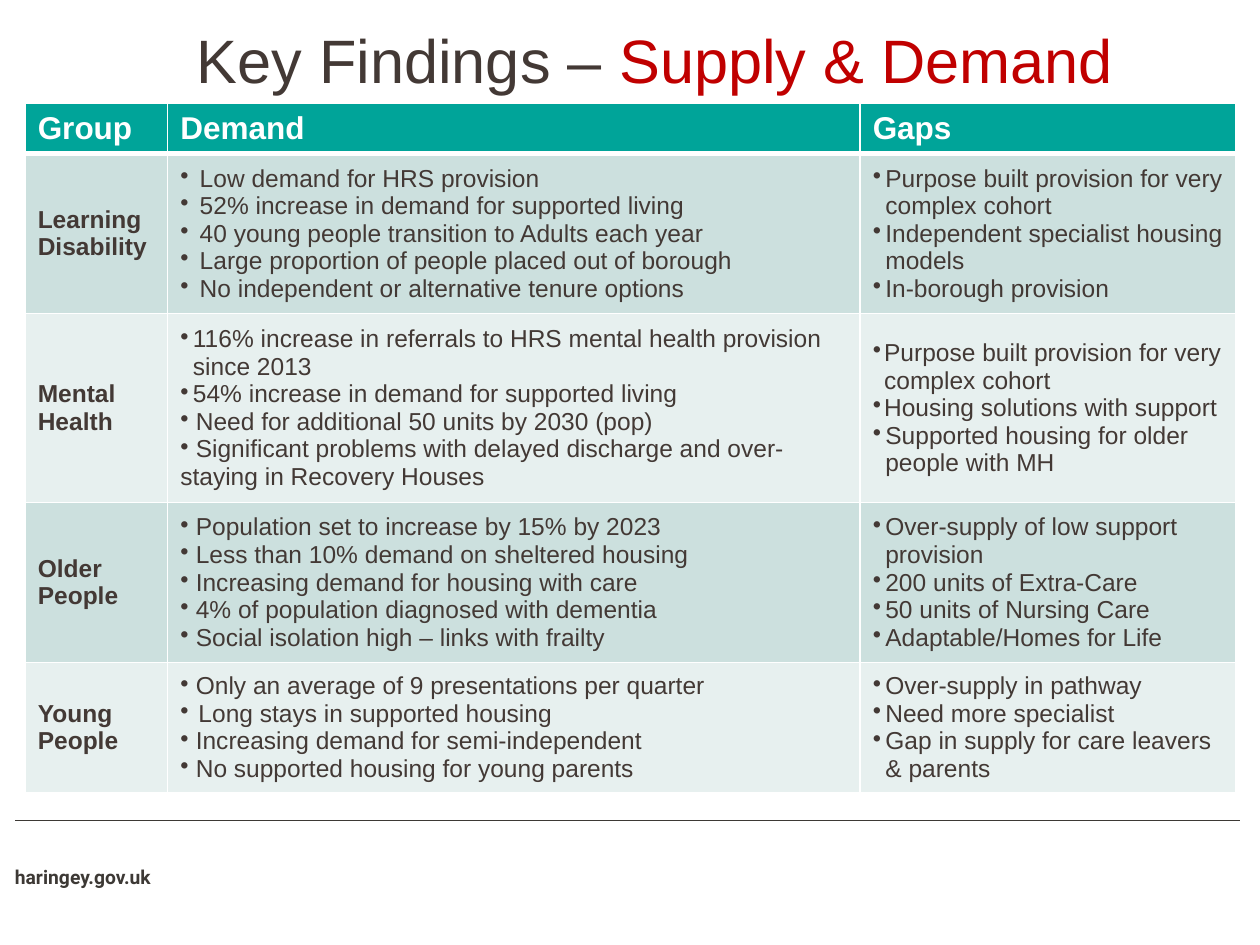
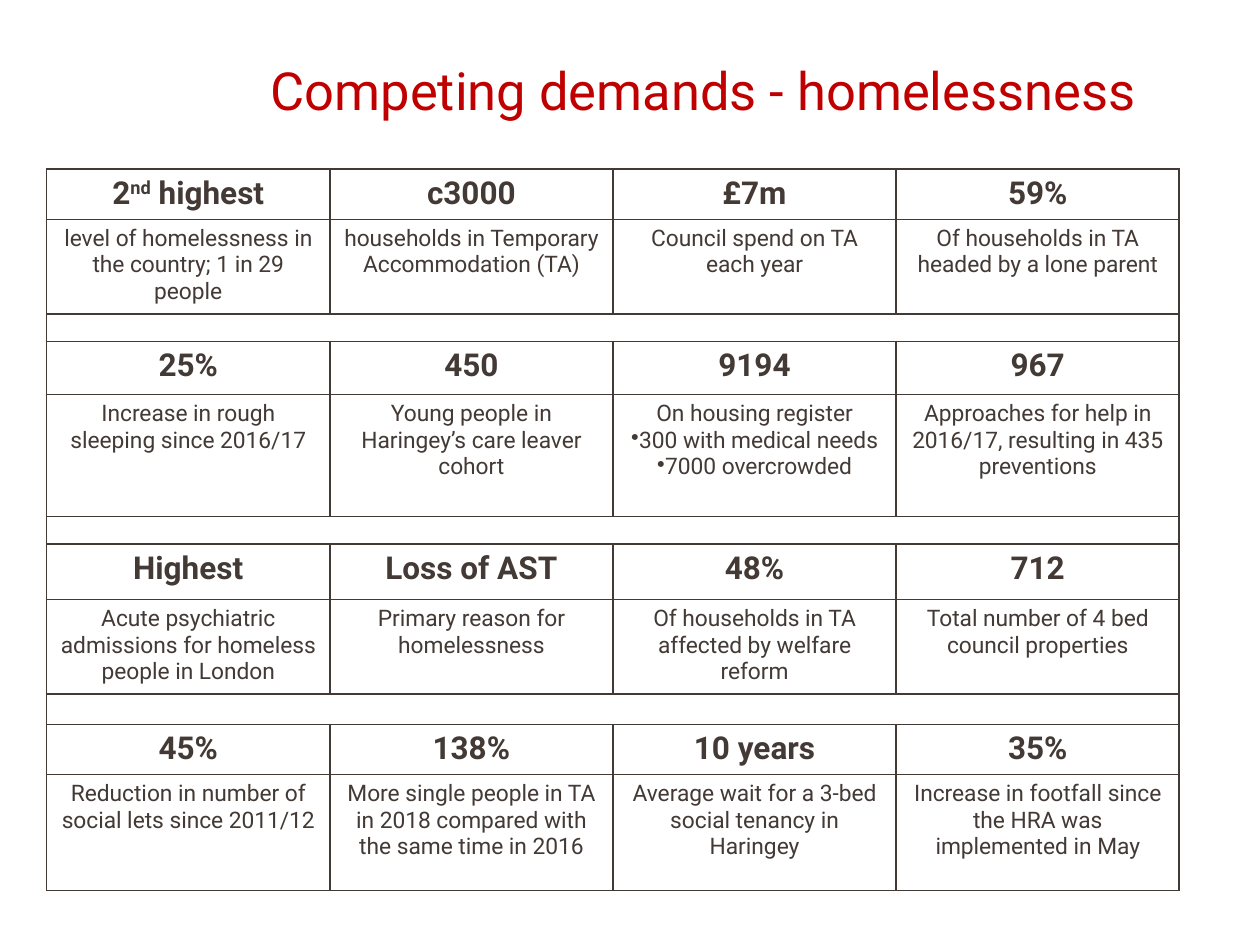
from dataclasses import dataclass, replace

import pptx
import pptx.dml.color
import pptx.enum.shapes
import pptx.enum.text
import pptx.oxml
import pptx.oxml.ns
import pptx.util

ALIGN = pptx.enum.text.PP_ALIGN
ANCHOR = pptx.enum.text.MSO_ANCHOR
SLIDE_WIDTH = pptx.util.Inches(10)
SLIDE_HEIGHT = pptx.util.Inches(7.5)
GRID = SLIDE_WIDTH // 100


@dataclass(frozen=True)
class Theme:
    ink: str = "433935"
    footer_ink: str = "3D3935"
    accent: str = "C00000"
    header: str = "00A499"
    bands: tuple = ("CCE0DE", "E7F0EF")
    white: str = "FFFFFF"
    plain_font: str = "Arial"
    brand_font: str = "Roboto"
    findings_title: int = 35
    demands_title: int = 30
    heading: int = 18
    body: int = 14
    caption: int = 13
    footer: int = 11
    spacer: int = 8


@dataclass(frozen=True)
class TextStyle:
    font: str
    size: int
    color: str
    bold: bool = False
    align: ALIGN = ALIGN.LEFT


@dataclass(frozen=True)
class Box:
    left: float
    top: float
    width: float
    height: float

    def emu(self):
        return [round(side * GRID) for side in (self.left, self.top, self.width, self.height)]


@dataclass(frozen=True)
class Bullet:
    text: str
    hang: float


THEME = Theme()
TABLE_HEADING = TextStyle(THEME.plain_font, THEME.heading, THEME.white, True)
FINDING = TextStyle(THEME.plain_font, THEME.body, THEME.ink)
FIGURE = TextStyle(THEME.brand_font, THEME.heading, THEME.ink, True, ALIGN.CENTER)
CAPTION = replace(FIGURE, size=THEME.caption, bold=False)
FOOTER = TextStyle(THEME.brand_font, THEME.footer, THEME.footer_ink, True)


def bullets(hang, *texts):
    return [Bullet(text, hang) for text in texts]


FINDINGS_HEADINGS = ("Group", "Demand", "Gaps")
FINDINGS = [
    ("Learning Disability",
     bullets(0.1, " Low demand for HRS provision",
             " 52% increase in demand for supported living",
             " 40 young people transition to Adults each year",
             " Large proportion of people placed out of borough",
             " No independent or alternative tenure options"),
     bullets(0.1, "Purpose built provision for very complex cohort",
             "Independent specialist housing models",
             "In-borough provision")),
    ("Mental Health",
     bullets(0.1, "116% increase in referrals to HRS mental health provision since 2013",
             "54% increase in demand for supported living")
     + bullets(0, " Need for additional 50 units by 2030 (pop)",
               " Significant problems with delayed discharge and over-staying in Recovery Houses"),
     bullets(0.09, "Purpose built provision for very complex cohort",
             "Housing solutions with support")
     + bullets(0.1, "Supported housing for older people with MH")),
    ("Older People",
     bullets(0, " Population set to increase by 15% by 2023",
             " Less than 10% demand on sheltered housing",
             " Increasing demand for housing with care",
             " 4% of population diagnosed with dementia",
             " Social isolation high – links with frailty"),
     bullets(0.1, "Over-supply of low support provision",
             "200 units of Extra-Care",
             "50 units of Nursing Care",
             "Adaptable/Homes for Life")),
    ("Young People",
     bullets(0, " Only an average of 9 presentations per quarter")
     + bullets(0.09, " Long stays in supported housing")
     + bullets(0, " Increasing demand for semi-independent",
               " No supported housing for young parents"),
     bullets(0.1, "Over-supply in pathway",
             "Need more specialist",
             "Gap in supply for care leavers & parents")),
]

HOMELESSNESS = [
    [("2^nd^ highest", ["level of homelessness in the country; 1 in 29 people"]),
     ("c3000", ["households in Temporary Accommodation (TA)"]),
     ("£7m", ["Council spend on TA each year"]),
     ("59%", ["Of households in TA headed by a lone parent"])],
    [("25%", ["Increase in rough sleeping since 2016/17"]),
     ("450", ["Young people in Haringey’s care leaver cohort"]),
     ("9194", ["On housing register"] + bullets(0, "300 with medical needs", "7000 overcrowded")),
     ("967", ["Approaches for help in 2016/17, resulting in 435 preventions"])],
    [("Highest", ["Acute psychiatric admissions for homeless people in London"]),
     ("Loss of AST", ["Primary reason for homelessness"]),
     ("48%", ["Of households in TA affected by welfare reform"]),
     ("712", ["Total number of 4 bed council properties"])],
    [("45%", ["Reduction in number of social lets since 2011/12"]),
     ("138%", ["More single people in TA in 2018 compared with the same time in 2016"]),
     ("10 years", ["Average wait for a 3-bed social tenancy in Haringey"]),
     ("35%", ["Increase in footfall since the HRA was implemented in May"])],
]


def rgb(color):
    return pptx.dml.color.RGBColor.from_string(color)


def add_xml(parent, tag, **attributes):
    child = pptx.oxml.parse_xml(f"<a:{tag} {pptx.oxml.ns.nsdecls('a')}/>")
    for name, value in attributes.items():
        child.set(name, str(value))
    parent.append(child)
    return child


def format_run(run, style):
    run.font.name = style.font
    run.font.size = pptx.util.Pt(style.size)
    run.font.bold = style.bold
    run.font.color.rgb = rgb(style.color)


def write_line(paragraph, line, style):
    text = line
    if isinstance(line, Bullet):
        text = line.text
        properties = paragraph._p.get_or_add_pPr()
        hang = pptx.util.Inches(line.hang)
        properties.set("marL", str(hang))
        properties.set("indent", str(-hang))
        add_xml(properties, "buChar", char="•")
    paragraph.alignment = style.align
    pieces = text.split("^")
    paragraph.text = pieces[0]
    for piece in pieces[1:]:
        paragraph.add_run().text = piece
    for index, run in enumerate(paragraph.runs):
        format_run(run, style)
        if index % 2:
            run._r.get_or_add_rPr().set("baseline", "30000")


def write_lines(text_frame, lines, style):
    for index, line in enumerate(lines):
        paragraph = text_frame.add_paragraph() if index else text_frame.paragraphs[0]
        write_line(paragraph, line, style)


def paint_cell(cell, fill, border, bottom=1, top=1):
    properties = cell._tc.get_or_add_tcPr()
    for side, width in (("L", 1), ("R", 1), ("T", top), ("B", bottom)):
        line = add_xml(properties, f"ln{side}", w=pptx.util.Pt(width))
        add_xml(add_xml(line, "solidFill"), "srgbClr", val=border)
    cell.fill.solid()
    cell.fill.fore_color.rgb = rgb(fill)


def add_grid_table(slide, box, columns, rows):
    table = slide.shapes.add_table(len(rows), len(columns), *box.emu()).table
    table.first_row = False
    table.horz_banding = False
    for column, share in zip(table.columns, columns):
        column.width = round(box.width * GRID * share / sum(columns))
    for row, share in zip(table.rows, rows):
        row.height = round(box.height * GRID * share / sum(rows))
    return table


def add_text(slide, box, text, style):
    shape = slide.shapes.add_textbox(*box.emu())
    shape.text_frame.word_wrap = True
    write_lines(shape.text_frame, [text], style)
    return shape.text_frame.paragraphs[0]


def add_footer(slide, box):
    y = round(box.top * GRID)
    start, end = round((box.left + 1.2) * GRID), round((box.left + 98.4) * GRID)
    rule = slide.shapes.add_connector(pptx.enum.shapes.MSO_CONNECTOR.STRAIGHT, start, y, end, y)
    rule.line.color.rgb = rgb(THEME.footer_ink)
    rule.line.width = pptx.util.Pt(0.5)
    add_xml(rule._element.spPr, "effectLst")
    address = Box(box.left + 0.2, box.top + 3.1, box.width * 0.32, 4)
    add_text(slide, address, "haringey.gov.uk", FOOTER)


def add_findings_table(slide, box):
    table = add_grid_table(slide, box, (11.3, 54.9, 29.8), (4, 12.5, 14.1, 11.9, 10.2))
    for column, heading in enumerate(FINDINGS_HEADINGS):
        cell = table.cell(0, column)
        paint_cell(cell, THEME.header, THEME.white, bottom=3)
        write_lines(cell.text_frame, [heading], TABLE_HEADING)
        cell.vertical_anchor = ANCHOR.MIDDLE
    for row, (group, demand, gaps) in enumerate(FINDINGS, start=1):
        for column, lines in enumerate(([group], demand, gaps)):
            cell = table.cell(row, column)
            paint_cell(cell, THEME.bands[(row - 1) % 2], THEME.white, top=3 if row == 1 else 1)
            write_lines(cell.text_frame, lines, replace(FINDING, bold=column == 0))
            cell.vertical_anchor = ANCHOR.MIDDLE


def add_spacer_row(table, row):
    last = len(table.columns) - 1
    for column in range(last + 1):
        cell = table.cell(row, column)
        cell.margin_top = cell.margin_bottom = 0
        add_xml(cell.text_frame.paragraphs[0]._p, "endParaRPr", sz=THEME.spacer * 100)
        paint_cell(cell, THEME.white, THEME.ink)
    table.cell(row, 0).merge(table.cell(row, last))


def add_homelessness_table(slide, box):
    rows = (4, 7.5, 2.2, 4.2, 9.7, 2.2, 4.4, 7.5, 2.4, 4, 9.2)
    table = add_grid_table(slide, box, (1,) * 4, rows)
    for band, facts in enumerate(HOMELESSNESS):
        top = band * 3
        if band:
            add_spacer_row(table, top - 1)
        for column, (figure, caption) in enumerate(facts):
            for row, lines, style in ((top, [figure], FIGURE), (top + 1, caption, CAPTION)):
                cell = table.cell(row, column)
                paint_cell(cell, THEME.white, THEME.ink)
                write_lines(cell.text_frame, lines, style)


def build_findings_slide(slide):
    add_footer(slide, Box(0, 65.1, 100, 9.9))
    add_findings_table(slide, Box(2, 8.2, 96.1, 52.7))
    style = TextStyle(THEME.plain_font, THEME.findings_title, THEME.ink, align=ALIGN.CENTER)
    title = add_text(slide, Box(8.3, 1.3, 87.4, 6.9), "Key Findings – ", style)
    topic = title.add_run()
    topic.text = "Supply & Demand"
    format_run(topic, replace(style, color=THEME.accent))


def build_homelessness_slide(slide):
    add_homelessness_table(slide, Box(3.7, 13.4, 89.9, 57.3))
    style = TextStyle(THEME.brand_font, THEME.demands_title, THEME.accent)
    add_text(slide, Box(20.5, 4.1, 79.5, 6.1), "Competing demands - homelessness", style)


def main():
    presentation = pptx.Presentation()
    presentation.slide_width = SLIDE_WIDTH
    presentation.slide_height = SLIDE_HEIGHT
    blank = presentation.slide_layouts[6]
    for build in (build_findings_slide, build_homelessness_slide):
        build(presentation.slides.add_slide(blank))
    presentation.save("out.pptx")


if __name__ == "__main__":
    main()
